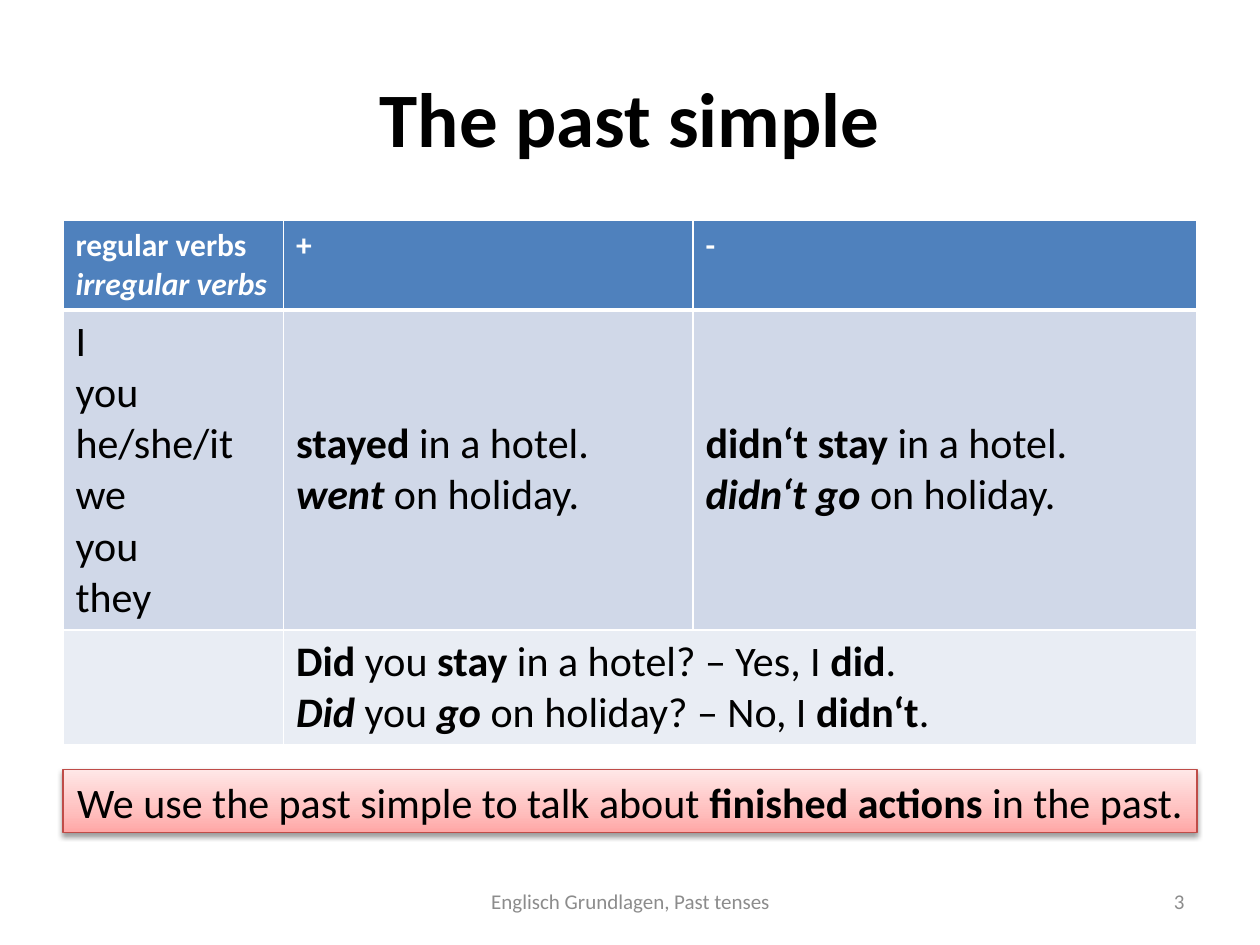
from copy import deepcopy

from lxml import etree
from pptx import Presentation
from pptx.dml.color import RGBColor
from pptx.enum import shapes, text
from pptx.oxml import ns
from pptx.util import Inches, Pt

THEME = {
    "font": "Calibri",
    "title": 44, "body": 24, "header": 18, "footer": 12,
    "black": "000000", "white": "FFFFFF", "grey": "8C8C8C",
    "row_fills": ["4F81BD", "D0D8E8", "E9EDF4"],
    "callout_line": "BF4C48",
    "callout_stops": [(0, "FFA6A5"), (0.35, "FFC0BF"), (1, "FFE7E7")],
}

# A paragraph is a list of (text, style) runs; "b" is bold, "i" is italic.
TITLE = [[("The past simple", "b")]]
PRONOUNS = ["I", "you", "he/she/it", "we", "you", "they"]
ROWS = [
    [
        [[("regular verbs", "b")], [("irregular verbs", "bi")]],
        [[("+", "b")]],
        [[("-", "b")]],
    ],
    [
        [[(pronoun, "")] for pronoun in PRONOUNS],
        [[("stayed ", "b"), ("in a hotel.", "")],
         [("went ", "bi"), ("on holiday.", "")]],
        [[("didn‘t stay ", "b"), ("in a hotel.", "")],
         [("didn‘t go ", "bi"), ("on holiday.", "")]],
    ],
    [
        [],
        [[("Did ", "b"), ("you ", ""), ("stay ", "b"),
          ("in a hotel? – Yes, I ", ""), ("did", "b"), (".", "")],
         [("Did ", "bi"), ("you ", ""), ("go ", "bi"),
          ("on holiday? – No, I ", ""), ("didn‘t", "b"), (".", "")]],
        [],
    ],
]
CALLOUT = [[("We use the past simple to talk about ", ""),
            ("finished actions ", "b"), ("in the past.", "")]]
FOOTER = [[("Englisch Grundlagen, Past tenses", "")]]
PAGE_NUMBER = [[("3", "")]]

MARGIN, CONTENT_WIDTH = 0.5, 9
COLUMN_WIDTHS = [1.75, 3.25, 4]
ROW_HEIGHTS = [0.71, 2.54, 0.91]
LEFT, CENTER, RIGHT = text.PP_ALIGN.LEFT, text.PP_ALIGN.CENTER, text.PP_ALIGN.RIGHT


def rgb(name):
    return RGBColor.from_string(THEME.get(name, name))


def write(frame, paragraphs, size, color, align=LEFT):
    for index, runs in enumerate(paragraphs):
        paragraph = frame.add_paragraph() if index else frame.paragraphs[0]
        paragraph.alignment = align
        for content, style in runs:
            run = paragraph.add_run()
            run.text = content
            run.font.name = THEME["font"]
            run.font.size = Pt(THEME[size])
            run.font.color.rgb = rgb(color)
            run.font.bold = "b" in style
            run.font.italic = "i" in style


def add_text(slide, box, paragraphs, size, color, align):
    frame = slide.shapes.add_textbox(*map(Inches, box)).text_frame
    frame.word_wrap = True
    frame.vertical_anchor = text.MSO_ANCHOR.MIDDLE
    write(frame, paragraphs, size, color, align)


def set_borders(cell, widths):
    """Draw white cell borders; widths maps the sides L, R, T, B to points."""
    properties = cell._tc.get_or_add_tcPr()
    for side, width in widths.items():
        line = etree.SubElement(properties, ns.qn(f"a:ln{side}"), w=str(Pt(width)))
        fill = etree.SubElement(line, ns.qn("a:solidFill"))
        etree.SubElement(fill, ns.qn("a:srgbClr"), val=THEME["white"])


def add_tense_table(slide):
    frame = slide.shapes.add_table(
        len(ROWS), len(COLUMN_WIDTHS), Inches(MARGIN), Inches(1.75),
        Inches(CONTENT_WIDTH), Inches(sum(ROW_HEIGHTS)))
    table = frame.table
    table.horz_banding = False
    for column, width in zip(table.columns, COLUMN_WIDTHS):
        column.width = Inches(width)
    for row, height in zip(table.rows, ROW_HEIGHTS):
        row.height = Inches(height)
    table.cell(2, 1).merge(table.cell(2, 2))

    for r, row in enumerate(ROWS):
        size, color = ("body", "black") if r else ("header", "white")
        for c, paragraphs in enumerate(row):
            cell = table.cell(r, c)
            set_borders(cell, {"L": 1, "R": 1, "T": 3 if r == 1 else 1,
                               "B": 1 if r else 3})
            cell.fill.solid()
            cell.fill.fore_color.rgb = rgb(THEME["row_fills"][r])
            write(cell.text_frame, paragraphs, size, color)
            if r == 1 and c:
                cell.vertical_anchor = text.MSO_ANCHOR.MIDDLE


def add_shadow(shape):
    effects = etree.SubElement(shape._element.spPr, ns.qn("a:effectLst"))
    shadow = etree.SubElement(
        effects, ns.qn("a:outerShdw"), blurRad=str(Pt(3.1)), dist=str(Pt(1.6)),
        dir="5400000", rotWithShape="0")
    color = etree.SubElement(shadow, ns.qn("a:srgbClr"), val=THEME["black"])
    etree.SubElement(color, ns.qn("a:alpha"), val="38000")


def add_callout(slide):
    box = (MARGIN, 6.11, CONTENT_WIDTH, 0.5)
    shape = slide.shapes.add_shape(shapes.MSO_SHAPE.RECTANGLE, *map(Inches, box))
    shape.fill.gradient()
    shape.fill.gradient_angle = 90
    stop_list = shape._element.spPr.find(".//" + ns.qn("a:gsLst"))
    stop_list.append(deepcopy(stop_list[0]))
    for stop, (position, color) in zip(shape.fill.gradient_stops, THEME["callout_stops"]):
        stop.position = position
        stop.color.rgb = rgb(color)
    shape.line.color.rgb = rgb("callout_line")
    shape.line.width = Pt(0.75)
    add_shadow(shape)
    shape.text_frame.word_wrap = True
    write(shape.text_frame, CALLOUT, "body", "black", CENTER)


def main():
    presentation = Presentation()
    presentation.slide_width, presentation.slide_height = Inches(10), Inches(7.5)
    slide = presentation.slides.add_slide(presentation.slide_layouts[6])
    add_text(slide, (MARGIN, 0.3, CONTENT_WIDTH, 1.25), TITLE, "title", "black", CENTER)
    add_tense_table(slide)
    add_callout(slide)
    add_text(slide, (7.17, 6.95, 2.33, 0.4), PAGE_NUMBER, "footer", "grey", RIGHT)
    add_text(slide, (3.42, 6.95, 3.17, 0.4), FOOTER, "footer", "grey", CENTER)
    presentation.save("out.pptx")


if __name__ == "__main__":
    main()
